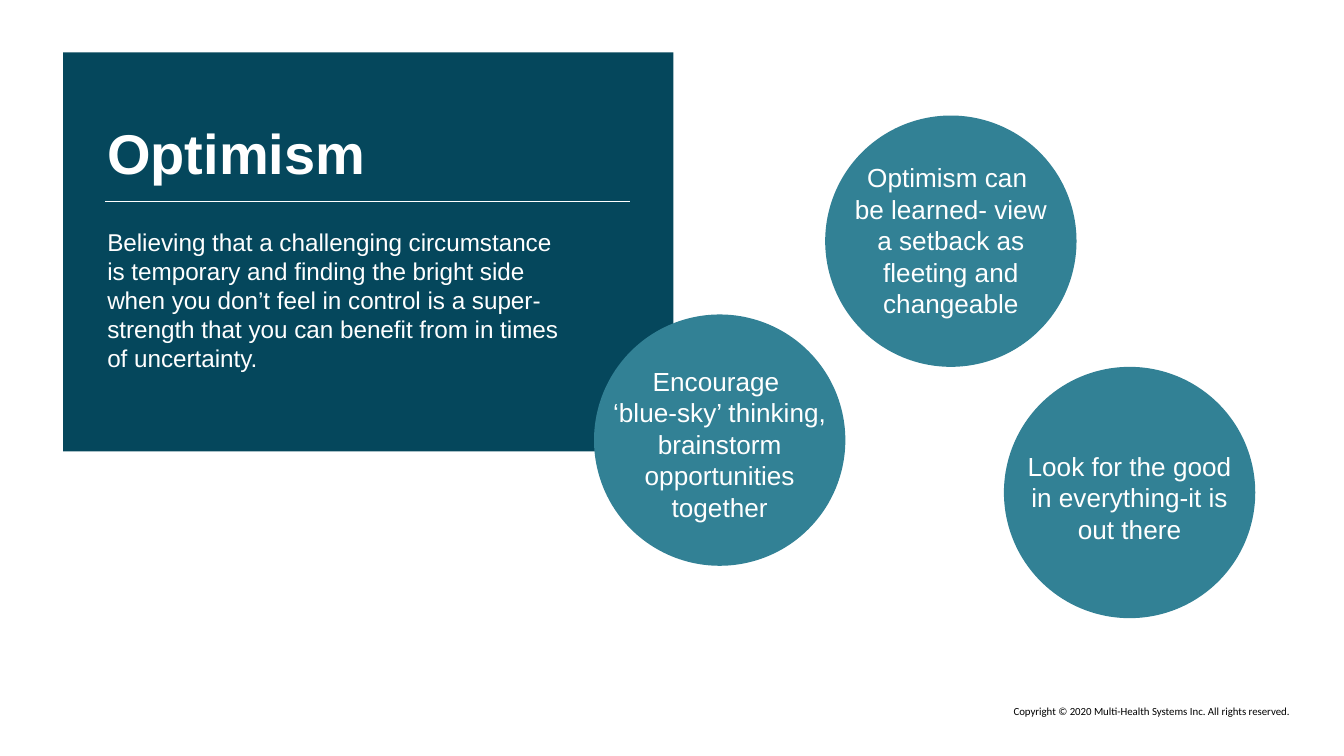
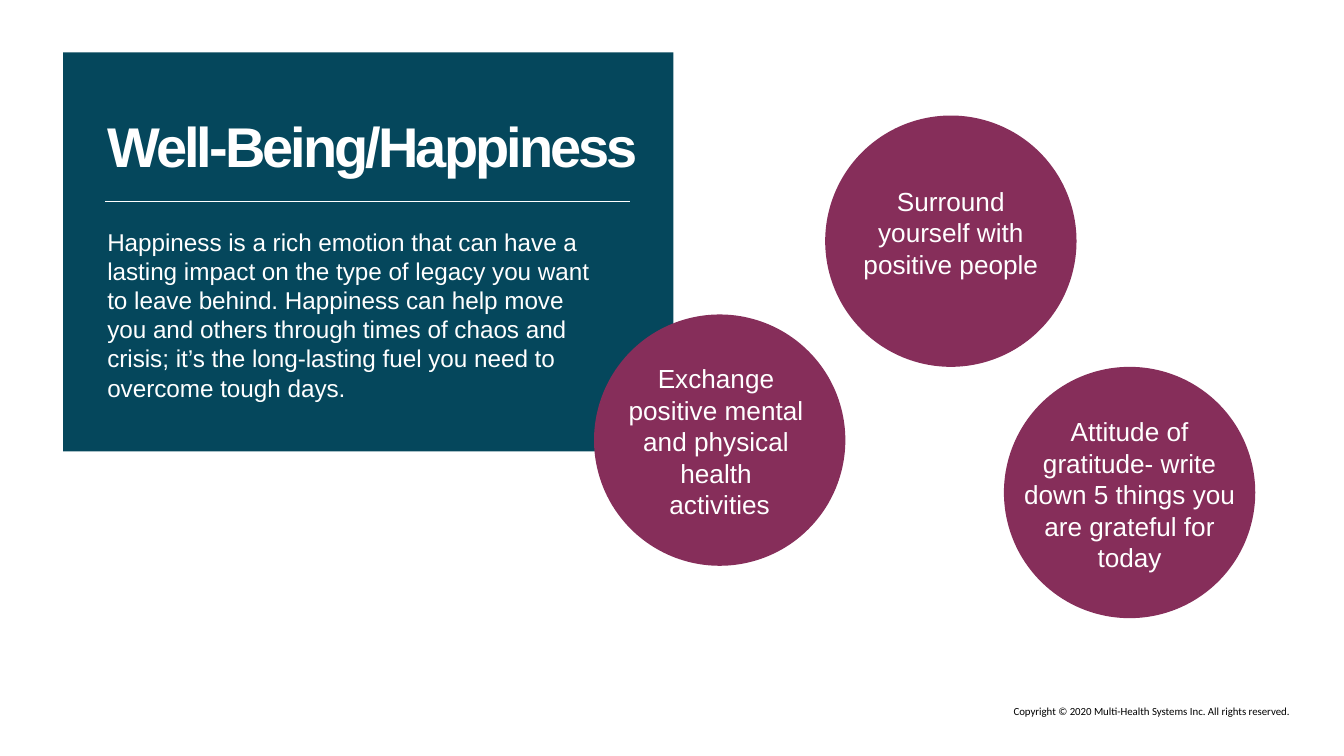
import copy
import dataclasses

import lxml.etree
import pptx
import pptx.dml.color
import pptx.enum.shapes
import pptx.enum.text
import pptx.oxml.ns
import pptx.util

ALIGN = pptx.enum.text.PP_ALIGN
ANCHOR = pptx.enum.text.MSO_ANCHOR
SHAPE = pptx.enum.shapes.MSO_SHAPE

COLUMNS, ROWS = 100, 56.25
DIAMETER = 18.7
LINE_ROWS, INSET_ROWS = 2.36, 1
# Left, top and caption width of each circle, in grid units
CIRCLES = {
    "top": (61.4, 8.6, 17.2),
    "left": (44.2, 23.4, 18.8),
    "right": (74.7, 27.3, 18.8),
}


@dataclasses.dataclass(frozen=True)
class Theme:
    panel: str = "05475C"
    teal: str = "328195"
    plum: str = "862E5A"
    light: str = "FFFFFF"
    dark: str = "000000"
    font: str = "Arial"
    footer_font: str = "Calibri"
    title_size: float = 30
    body_size: float = 13
    caption_size: float = 14
    footer_size: float = 10
    rule_width: float = 0.75


def color(value):
    return pptx.dml.color.RGBColor.from_string(value)


def write(frame, text, *, font, size, fill, bold=False, align=ALIGN.LEFT,
          line_points=None, tracking=None, baseline=None):
    """Fill a frame; a newline starts a paragraph and a vertical tab a line."""
    for index, content in enumerate(text.split("\n")):
        para = frame.add_paragraph() if index else frame.paragraphs[0]
        para.alignment = align
        if line_points:
            para.line_spacing = pptx.util.Pt(line_points)
        for number, line in enumerate(content.split("\v")):
            if number:
                para.add_line_break()
            span = para.add_run()
            span.text = line
            span.font.name = font
            span.font.size = pptx.util.Pt(size)
            span.font.bold = bold
            span.font.color.rgb = color(fill)
            properties = span._r.get_or_add_rPr()
            if tracking:
                properties.set("spc", str(round(tracking * 100)))
            if baseline:
                properties.set("baseline", str(baseline * 1000))
        for line_break in para._p.findall(pptx.oxml.ns.qn("a:br")):
            line_break.insert(0, copy.deepcopy(properties))


class Painter:
    def __init__(self, deck, theme):
        self.deck = deck
        self.theme = theme
        self.page = None

    def new_page(self):
        self.page = self.deck.slides.add_slide(self.deck.slide_layouts[6])
        self.page.background.fill.solid()
        self.page.background.fill.fore_color.rgb = color(self.theme.light)

    def place(self, *lengths):
        """Turn alternating column and row counts into slide lengths."""
        units = (self.deck.slide_width / COLUMNS, self.deck.slide_height / ROWS)
        return [round(length * units[i % 2]) for i, length in enumerate(lengths)]

    def shape(self, kind, area, fill):
        shape = self.page.shapes.add_shape(kind, *self.place(*area))
        shape.shadow.inherit = False
        shape.fill.solid()
        shape.fill.fore_color.rgb = color(fill)
        shape.line.fill.background()

    def rule(self, start, end):
        line = self.page.shapes.add_connector(
            pptx.enum.shapes.MSO_CONNECTOR.STRAIGHT, *self.place(*start, *end))
        line.line.color.rgb = color(self.theme.light)
        line.line.width = pptx.util.Pt(self.theme.rule_width)
        lxml.etree.SubElement(line._element.spPr,
                              pptx.oxml.ns.qn("a:effectLst"))

    def text(self, area, text, anchor=ANCHOR.TOP, **style):
        box = self.page.shapes.add_textbox(*self.place(*area))
        box.text_frame.word_wrap = True
        box.text_frame.vertical_anchor = anchor
        style = {"font": self.theme.font, "fill": self.theme.light} | style
        write(box.text_frame, text, **style)

    def frame(self):
        """Draw the panel, footer and rule that every page shares."""
        self.shape(SHAPE.RECTANGLE, (4.7, 3.9, 45.4, 29.7), self.theme.panel)
        self.text((70.3, 51.8, 26.6, 2.1),
                  "Copyright © 2020 Multi-Health Systems Inc. All rights reserved.",
                  font=self.theme.footer_font, size=self.theme.footer_size,
                  fill=self.theme.dark, align=ALIGN.RIGHT, baseline=30)
        self.rule((7.8, 15), (46.9, 15))

    def title(self, text, width, **style):
        self.text((7, 7.8, width, 7), text, ANCHOR.MIDDLE,
                  size=self.theme.title_size, bold=True, **style)

    def body(self, text, width):
        self.text((7, 16.4, width, 16.4), text, size=self.theme.body_size)

    def caption(self, position, text, lines, drop):
        """Centre text on a circle, lowered by drop rows."""
        left, top, width = CIRCLES[position]
        height = lines * LINE_ROWS + INSET_ROWS
        area = (left + (DIAMETER - width) / 2,
                top + (DIAMETER - height) / 2 + drop, width, height)
        self.text(area, text, size=self.theme.caption_size, align=ALIGN.CENTER)

    def circles(self, fill, captions):
        for left, top, _ in CIRCLES.values():
            self.shape(SHAPE.OVAL, (left, top, DIAMETER, DIAMETER), fill)
        for caption in captions:
            self.caption(*caption)


def optimism(painter):
    painter.new_page()
    painter.frame()
    painter.title("Optimism", 40.6)
    painter.body(
        "Believing that a challenging circumstance is temporary and finding "
        "the bright side when you don’t feel in control is a super-strength "
        "that you can benefit from in times of uncertainty.", 36.7)
    painter.circles(painter.theme.teal, [
        ("right", "Look for the good in everything-it is out there", 3, 0.4),
        ("left", "Encourage \v‘blue-sky’ thinking, brainstorm opportunities "
                 "together", 5, 0.35),
        ("top", "Optimism can \vbe learned- view a setback as fleeting and "
                "changeable", 5, 0),
    ])


def happiness(painter):
    painter.new_page()
    painter.frame()
    painter.title("Well-Being/Happiness", 43, line_points=29, tracking=-1.6)
    painter.body(
        "Happiness is a rich emotion that can have a lasting impact on the "
        "type of legacy you want to leave behind. Happiness can help move you "
        "and others through times of chaos and crisis; it’s the long-lasting "
        "fuel you need to overcome tough days.", 38.3)
    painter.circles(painter.theme.plum, [
        ("right", "Attitude of gratitude- write down 5 things you are "
                  "grateful for today", 5, 0.2),
        ("left", "Exchange \vpositive mental \vand physical \vhealth \n"
                 "activities", 5, 0.15),
        ("top", "Surround yourself with positive people", 3, -0.6),
    ])


def main():
    deck = pptx.Presentation()
    deck.slide_width = pptx.util.Inches(10)
    deck.slide_height = round(deck.slide_width * ROWS / COLUMNS)
    painter = Painter(deck, Theme())
    optimism(painter)
    happiness(painter)
    deck.save("out.pptx")


if __name__ == "__main__":
    main()
